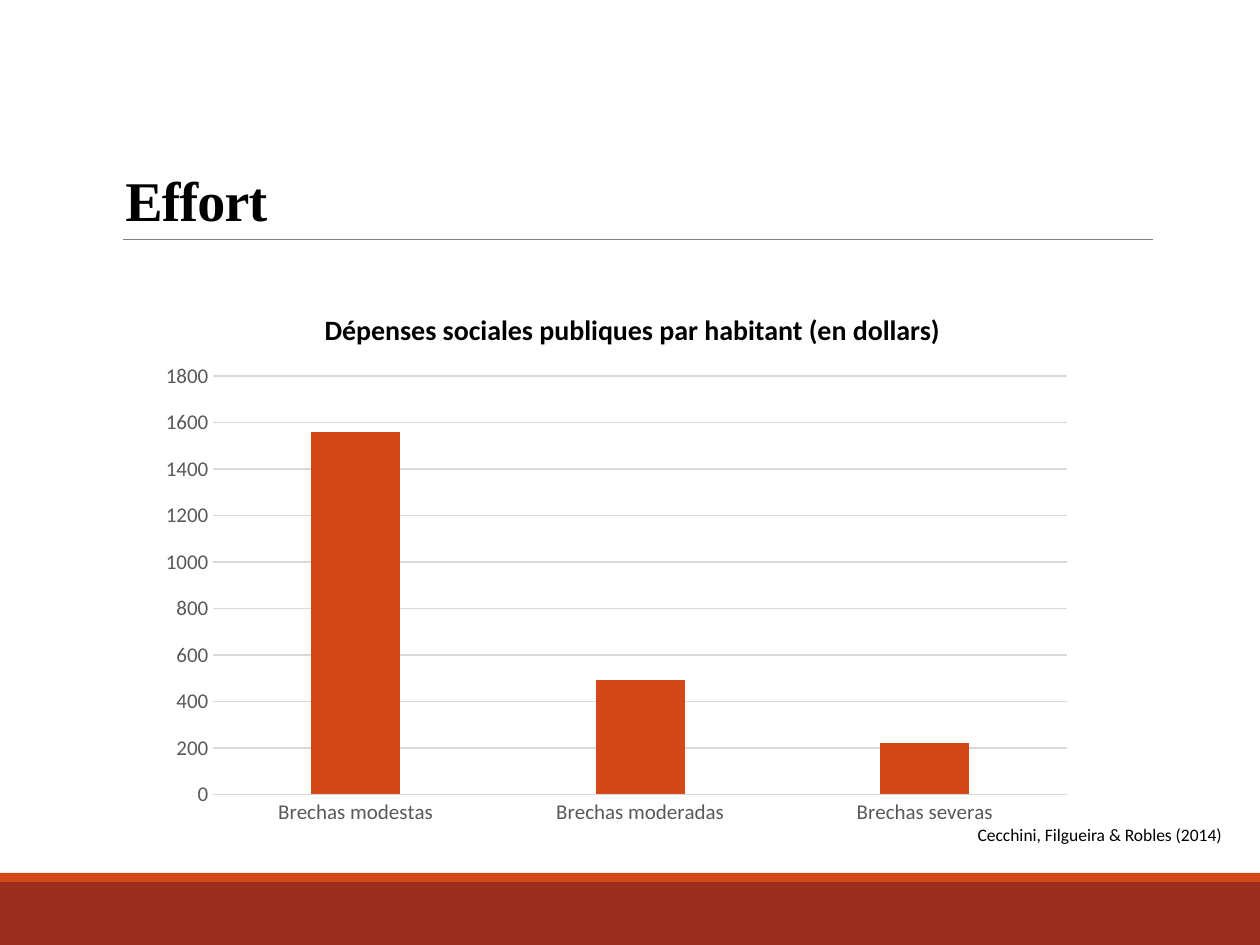
from pptx import Presentation
from pptx.chart.data import CategoryChartData
from pptx.dml.color import RGBColor
from pptx.enum.chart import XL_CHART_TYPE, XL_TICK_MARK
from pptx.enum.shapes import MSO_CONNECTOR, MSO_SHAPE
from pptx.enum.text import MSO_ANCHOR, PP_ALIGN
from pptx.oxml.ns import qn
from pptx.util import Emu, Pt
from lxml import etree

COLUMNS = XL_CHART_TYPE.COLUMN_CLUSTERED
NO_TICK = XL_TICK_MARK.NONE
STRAIGHT = MSO_CONNECTOR.STRAIGHT
RECTANGLE = MSO_SHAPE.RECTANGLE
TOP, BOTTOM = MSO_ANCHOR.TOP, MSO_ANCHOR.BOTTOM
LEFT, CENTER, RIGHT = PP_ALIGN.LEFT, PP_ALIGN.CENTER, PP_ALIGN.RIGHT

PX = 914400 // 126
THEME = {
    "accent": RGBColor.from_string("D34817"),
    "footer": RGBColor.from_string("9B2D1F"),
    "rule": RGBColor.from_string("808080"),
    "grid": RGBColor.from_string("D9D9D9"),
    "axis_text": RGBColor.from_string("595959"),
    "text": RGBColor.from_string("000000"),
    "heading_font": "Times New Roman",
    "body_font": "Calibri",
    "heading_size": Pt(32),
    "chart_title_size": Pt(16),
    "axis_size": Pt(12),
    "source_size": Pt(10),
}


def px(*lengths):
    return [Emu(length * PX) for length in lengths]


def add_text(words, box, font, size, align, anchor=TOP, bold=False):
    frame = slide.shapes.add_textbox(*px(*box)).text_frame
    frame.word_wrap = True
    frame.vertical_anchor = anchor
    frame.text = words
    paragraph = frame.paragraphs[0]
    paragraph.alignment = align
    run = paragraph.runs[0]
    run.font.name = font
    run.font.size = size
    run.font.bold = bold
    run.font.color.rgb = THEME["text"]
    return paragraph


prs = Presentation()
prs.slide_width, prs.slide_height = px(1260, 945)
slide = prs.slides.add_slide(prs.slide_layouts[6])

# Footer bands
for top, height, color in ((882, 63, "footer"), (873, 9, "accent")):
    band = slide.shapes.add_shape(RECTANGLE, *px(0, top, 1260, height))
    band.shadow.inherit = False
    band.fill.solid()
    band.fill.fore_color.rgb = THEME[color]
    band.line.fill.background()

# Rule under the heading
rule = slide.shapes.add_connector(STRAIGHT, *px(123, 239, 1153, 239))
rule.line.color.rgb = THEME["rule"]
rule.line.width = Pt(0.5)
etree.SubElement(rule._element.spPr, qn("a:effectLst"))

# Spending chart
spending = CategoryChartData()
spending.categories = ["Brechas modestas", "Brechas moderadas", "Brechas severas"]
spending.add_series("Series 1", (1560, 490, 220))
chart = slide.shapes.add_chart(COLUMNS, *px(147, 354, 939, 480), spending).chart
chart.has_title = False
chart.has_legend = False
chart.font.name = THEME["body_font"]
chart.font.size = THEME["axis_size"]

plot = chart.plots[0]
plot.gap_width = 219
plot.overlap = -27
plot.vary_by_categories = False
bars = plot.series[0].format.fill
bars.solid()
bars.fore_color.rgb = THEME["accent"]

for axis in (chart.category_axis, chart.value_axis):
    axis.major_tick_mark = NO_TICK
    axis.minor_tick_mark = NO_TICK
    axis.tick_labels.font.name = THEME["body_font"]
    axis.tick_labels.font.size = THEME["axis_size"]
    axis.tick_labels.font.color.rgb = THEME["axis_text"]

chart.value_axis.minimum_scale = 0
chart.value_axis.maximum_scale = 1800
chart.value_axis.major_unit = 200
chart.value_axis.has_major_gridlines = True
chart.value_axis.format.line.fill.background()
for line in (chart.category_axis.format.line,
             chart.value_axis.major_gridlines.format.line):
    line.color.rgb = THEME["grid"]
    line.width = Pt(0.75)

# Heading
heading = add_text("Effort", (113, 39, 1040, 200), THEME["heading_font"],
                   THEME["heading_size"], LEFT, BOTTOM, bold=True)
heading.line_spacing = 0.85
heading.runs[0].font._element.set("spc", "-50")

# Chart title and source
add_text("Dépenses sociales publiques par habitant (en dollars)",
         (256, 306, 753, 47), THEME["body_font"],
         THEME["chart_title_size"], CENTER, bold=True)
add_text("Cecchini, Filgueira & Robles (2014)", (937, 818, 297, 34),
         THEME["body_font"], THEME["source_size"], RIGHT)

prs.save("out.pptx")
